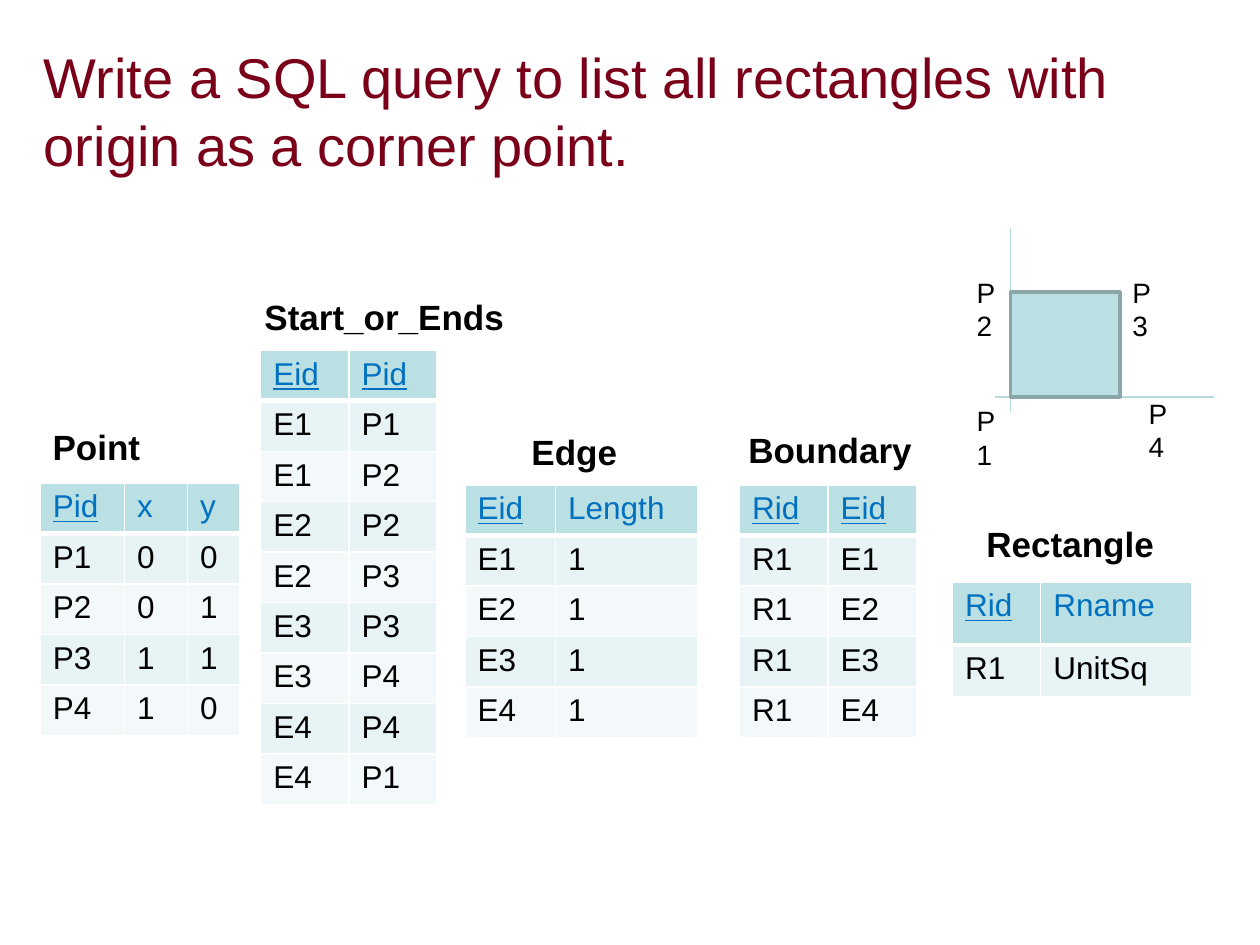
import pptx
import pptx.util
import pptx.dml.color
import pptx.enum.shapes
import pptx.enum.text
import pptx.oxml
import pptx.oxml.ns
from dataclasses import dataclass

Pt = pptx.util.Pt


@dataclass(frozen=True)
class Theme:
    font: str = "Arial"
    title: str = "7A0019"
    ink: str = "000000"
    head: str = "0070C0"
    fill: str = "BBE0E3"
    bands: tuple = ("E7F3F4", "F3F9FA")
    grid: str = "FFFFFF"
    axis: str = "B6DCDF"
    edge: str = "8AA6A8"
    big: int = 32
    name: int = 20
    cell: int = 18
    label: int = 16


THEME = Theme()
ROW = 28.8
NAME_H = 31.7

# name, (left, top, width) of name, (left, top) of table,
# column widths, row heights, number of key columns, rows of text
TABLES = [
    ("Start_or_Ends", (144, 165.6, 152.6), (149, 200.2), (50.4, 50.4), [ROW] * 9, 2,
     ["Eid Pid", "E1 P1", "E1 P2", "E2 P2", "E2 P3", "E3 P3", "E3 P4", "E4 P4", "E4 P1"]),
    ("Point", (23, 239.8, 64.8), (23, 276), (48.2, 36, 30), [ROW] * 5, 1,
     ["Pid x y", "P1 0 0", "P2 0 1", "P3 1 1", "P4 1 0"]),
    ("Rectangle", (556.6, 295.2, 110.9), (544.3, 332.6), (50.4, 86.4), [36, 29.5], 1,
     ["Rid Rname", "R1 UnitSq"]),
    ("Boundary", (420.5, 241.2, 108.7), (422.6, 277.2), (50.6, 50.6), [ROW] * 5, 2,
     ["Rid Eid", "R1 E1", "R1 E2", "R1 E3", "R1 E4"]),
    ("Edge", (296.6, 242.6, 64.1), (265.7, 277.2), (51.8, 81.4), [ROW] * 5, 1,
     ["Eid Length", "E1 1", "E2 1", "E3 1", "E4 1"]),
]


def rgb(code):
    return pptx.dml.color.RGBColor.from_string(code)


def write(frame, text, size, color, bold=False, line=False):
    run = frame.paragraphs[0].add_run()
    run.text = text
    font = run.font
    font.name, font.size, font.bold = THEME.font, Pt(size), bold
    font.underline = line
    font.color.rgb = rgb(color)


def add_text(shapes, text, box, size, color=THEME.ink, bold=False, wrap=True):
    frame = shapes.add_textbox(*map(Pt, box)).text_frame
    frame.word_wrap = wrap
    write(frame, text, size, color, bold)
    return frame


def add_line(shapes, *ends):
    line = shapes.add_connector(pptx.enum.shapes.MSO_CONNECTOR.STRAIGHT, *map(Pt, ends))
    line.line.color.rgb = rgb(THEME.axis)
    line.line.width = Pt(0.75)
    line._element.spPr.append(pptx.oxml.parse_xml(
        f"<a:effectLst {pptx.oxml.ns.nsdecls('a')}/>"))


def add_rules(cell, top):
    """Draw the cell borders; a header row has a heavy lower one."""
    props = cell._tc.get_or_add_tcPr()
    for side in "LRTB":
        wide = Pt(3 if top and side == "B" else 1)
        props.append(pptx.oxml.parse_xml(
            f"<a:ln{side} {pptx.oxml.ns.nsdecls('a')} w='{wide}'><a:solidFill>"
            f"<a:srgbClr val='{THEME.grid}'/></a:solidFill></a:ln{side}>"))


def add_grid(shapes, spot, cols, highs, keys, rows):
    size = (sum(cols), sum(highs))
    table = shapes.add_table(len(rows), len(cols), *map(Pt, spot + size)).table
    for col, wide in zip(table.columns, cols):
        col.width = Pt(wide)
    for r, (row, high) in enumerate(zip(rows, highs)):
        table.rows[r].height = Pt(high)
        top = r == 0
        for c, text in enumerate(row.split()):
            cell = table.cell(r, c)
            add_rules(cell, top)
            cell.fill.solid()
            cell.fill.fore_color.rgb = rgb(THEME.fill if top else THEME.bands[(r - 1) % 2])
            write(cell.text_frame, text, THEME.cell,
                  THEME.head if top else THEME.ink, line=top and c < keys)


def add_plot(shapes):
    """Draw the unit square on its axes, with its corners named."""
    left, base, wide, high = 577.4, 226.8, 62.6, 59.8
    group = shapes.add_group_shape().shapes
    add_line(group, left, 130.3, left, 236.2)
    add_line(group, 568.8, base, 694, base)
    square = group.add_shape(pptx.enum.shapes.MSO_SHAPE.RECTANGLE,
                             *map(Pt, (left, base - high, wide, high)))
    square.shadow.inherit = False
    square.fill.solid()
    square.fill.fore_color.rgb = rgb(THEME.fill)
    square.line.color.rgb = rgb(THEME.edge)
    square.line.width = Pt(2)
    for text, x, y in (("P3", 640, 153.7), ("P2", 551, 153.7),
                       ("P4", 649.3, 222.8), ("P1", 551, 227.1)):
        add_text(group, text, (x, y, 23, 44), THEME.label)


def main():
    deck = pptx.Presentation()
    deck.slide_width, deck.slide_height = Pt(720), Pt(540)
    shapes = deck.slides.add_slide(deck.slide_layouts[6]).shapes
    title = add_text(
        shapes, "Write a SQL query to list all rectangles with origin as a corner point.",
        (18, 24.5, 678, 77), THEME.big, THEME.title)
    title.vertical_anchor = pptx.enum.text.MSO_ANCHOR.MIDDLE
    add_plot(shapes)
    for name, place, *grid in TABLES:
        add_grid(shapes, *grid)
        add_text(shapes, name, place + (NAME_H,), THEME.name, bold=True, wrap=False)
    deck.save("out.pptx")


if __name__ == "__main__":
    main()
